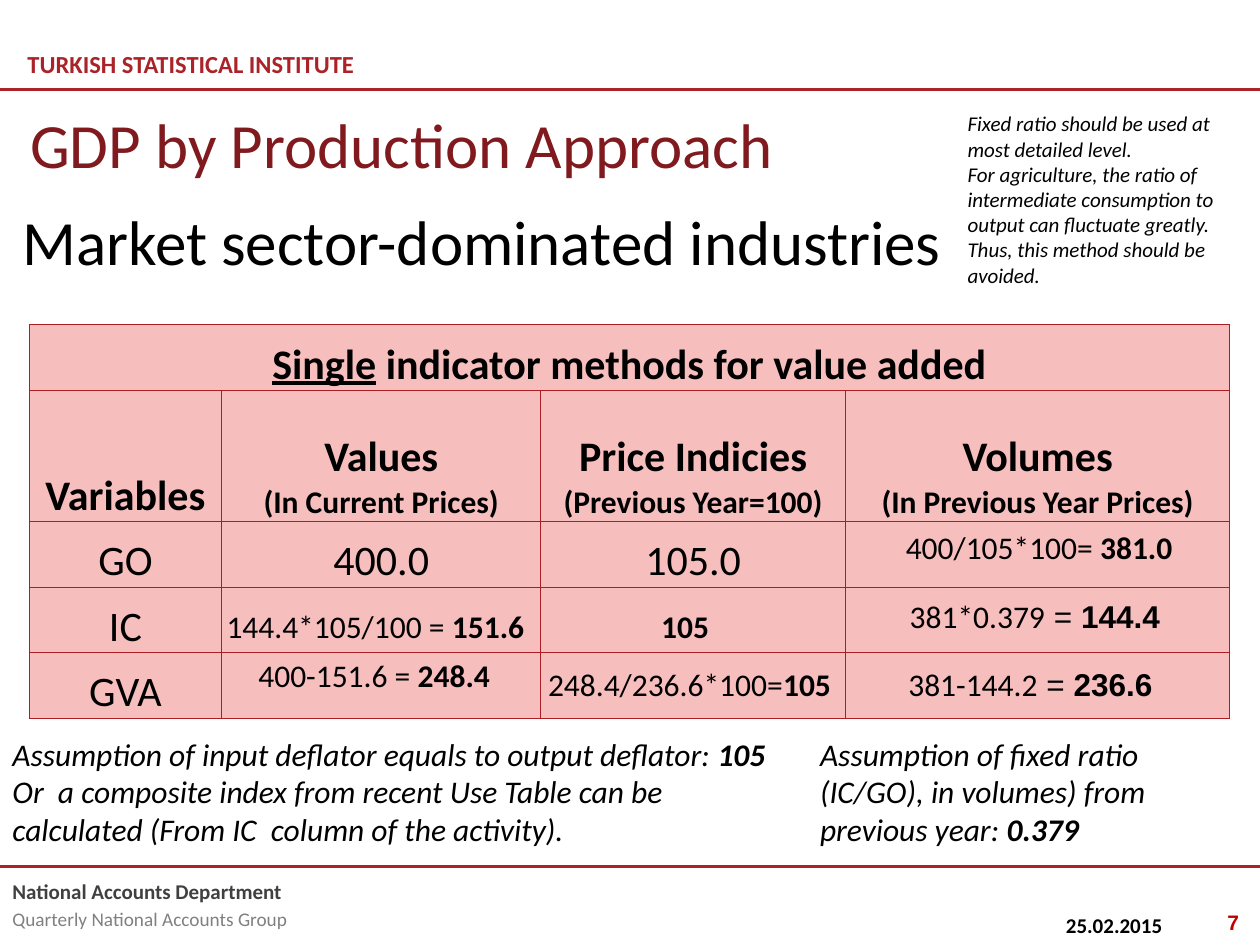
"""Build a slide on single indicator methods for GDP by production approach."""
from lxml import etree
from pptx import Presentation
from pptx.dml.color import RGBColor
from pptx.enum import shapes, text
from pptx.oxml import ns
from pptx.util import Pt

RED = RGBColor(0xAB, 0x23, 0x28)
BORDER = RGBColor(0xAB, 0x1F, 0x24)
TITLE = RGBColor(0x80, 0x1A, 0x1E)
NUMBER = RGBColor(0xC0, 0, 0)
PINK = RGBColor(0xF7, 0xBE, 0xBE)
DARK = RGBColor(0x40, 0x40, 0x40)
GREY = RGBColor(0x80, 0x80, 0x80)
BLACK = RGBColor(0, 0, 0)
LEFT, CENTER, RIGHT = text.PP_ALIGN.LEFT, text.PP_ALIGN.CENTER, text.PP_ALIGN.RIGHT


class Deck:
    """Holds the style and the current slide."""

    font = "Calibri"

    def __init__(self):
        self.prs = Presentation()
        self.prs.slide_width, self.prs.slide_height = Pt(720), Pt(540)
        self.s = self.prs.slides.add_slide(self.prs.slide_layouts[5])

    def para(self, p, runs, size=18, color=BLACK, align=LEFT, bold=False,
             italic=False, font=None, before=0):
        for words, changes in runs:
            r = p.add_run()
            r.text = words
            for name, value in changes.items():
                setattr(r.font, name, value)
        p.alignment = align
        p.space_before = Pt(before)
        f = p.font
        f.name, f.size, f.bold, f.italic = font or self.font, Pt(size), bold, italic
        f.color.rgb = color

    def title(self, words, x, y, w, h):
        sp = self.s.shapes.title
        sp.left, sp.top, sp.width, sp.height = Pt(x), Pt(y), Pt(w), Pt(h)
        sp.text_frame.vertical_anchor = text.MSO_ANCHOR.MIDDLE
        self.para(sp.text_frame.paragraphs[0], [(words, {})], 36, TITLE)

    def text(self, x, y, w, h, *paras, anchor=text.MSO_ANCHOR.TOP, **style):
        tf = self.s.shapes.add_textbox(Pt(x), Pt(y), Pt(w), Pt(h)).text_frame
        tf.word_wrap = True
        tf.vertical_anchor = anchor
        self.fill_frame(tf, paras, style)

    def fill_frame(self, tf, paras, style):
        for i, item in enumerate(paras):
            runs, own = item if isinstance(item, tuple) else (item, {})
            runs = [(runs, {})] if isinstance(runs, str) else runs
            p = tf.add_paragraph() if i else tf.paragraphs[0]
            self.para(p, runs, **{**style, **own})

    def rule(self, y):
        line = self.s.shapes.add_connector(
            shapes.MSO_CONNECTOR.STRAIGHT, 0, Pt(y), Pt(720), Pt(y))
        line.line.color.rgb, line.line.width = RED, Pt(1.5)
        etree.SubElement(line._element.spPr, ns.qn("a:effectLst"))

    def table(self, x, y, widths, heights, rows):
        t = self.s.shapes.add_table(len(heights), len(widths), Pt(x), Pt(y),
                                    Pt(sum(widths)), Pt(sum(heights))).table
        for col, w in zip(t.columns, widths):
            col.width = Pt(w)
        for row, h in zip(t.rows, heights):
            row.height = Pt(h)
        for r, cells in enumerate(rows):
            for cell, paras in zip(t.rows[r].cells, cells):
                self.cell(cell, paras, r < 2)
        t.cell(0, 0).merge(t.cell(0, len(widths) - 1))

    def cell(self, cell, paras, bold):
        cell.fill.solid()
        cell.fill.fore_color.rgb = PINK
        cell.vertical_anchor = text.MSO_ANCHOR.BOTTOM
        cell.margin_left = cell.margin_right = cell.margin_top = Pt(0.7)
        cell.margin_bottom = 0
        self.fill_frame(cell.text_frame, paras, dict(size=24, align=CENTER, bold=bold))
        for i, side in enumerate(("lnL", "lnR", "lnT", "lnB")):
            ln = etree.Element(ns.qn("a:" + side), w=str(Pt(0.75)))
            fill = etree.SubElement(ln, ns.qn("a:solidFill"))
            etree.SubElement(fill, ns.qn("a:srgbClr"), val=str(BORDER))
            cell._tc.get_or_add_tcPr().insert(i, ln)


def main():
    d = Deck()
    bold, arial = {"bold": True}, {"name": "Arial"}
    arial_bold = {**arial, **bold}
    d.text(8.6, 22.5, 255, 28, "TURKISH STATISTICAL INSTITUTE", size=14, color=RED,
           bold=True, anchor=text.MSO_ANCHOR.MIDDLE)
    d.text(0, 498.2, 309, 38, ("National Accounts Department", {"bold": True}),
           ("Quarterly National Accounts Group",
            {"size": 11, "color": GREY, "before": 2}), size=12, color=DARK)
    for y in (51, 495):
        d.rule(y)
    d.text(602, 517.7, 118, 22, "25.02.2015", size=12, bold=True)
    d.text(547, 516.2, 168, 22, "7", size=12, bold=True, color=NUMBER,
           font="Arial", align=RIGHT)
    d.title("GDP by Production Approach", 10, 56.2, 648, 51)
    d.text(5.8, 112.3, 618, 51, "Market sector-dominated industries", size=36)

    small = {"size": 18}
    d.table(16.6, 185.6, [110.2, 182.2, 174.2, 219.6], [37.5, 75, 37.5, 37.5, 37.5], [
        [[[("Single", {"underline": True}), (" indicator methods for value added", {})]],
         [], [], []],
        [["Variables"],
         ["Values", ("(In Current Prices)", small)],
         ["Price Indicies", ("(Previous Year=100)", small)],
         ["Volumes", ("(In Previous Year Prices)", small)]],
        [["GO"], ["400.0"], ["105.0"], []],
        [["IC"], [], [], []],
        [["GVA"], [], [], []],
    ])

    formulas = [
        (483.8, 298, 220, [("400/105*100= ", {}), ("381.0", bold)]),
        (481.3, 337.7, 220, [("381*0.379", {}), (" = ", arial), ("144.4", arial_bold)]),
        (478.8, 376.6, 220, [("381-144.2", {}), (" = ", arial), ("236.6", arial_bold)]),
        (129.6, 371.5, 168.5, [("400-151.6 = ", {}), ("248.4", bold)]),
        (281.5, 376.6, 225, [("248.4/236.6*100=", {}), ("105", bold)]),
        (281.5, 343.4, 220, [("105", bold)]),
        (104.5, 343.4, 220, [("144.4*105/100 = ", {}), ("151.6", bold)]),
    ]
    for x, y, w, runs in formulas:
        d.text(x, y, w, 29, runs, align=CENTER)

    d.text(461.5, 416.2, 248, 76,
           [("Assumption of fixed ratio (IC/GO), in volumes) from previous year: ", {}),
            ("0.379", bold)], italic=True)
    d.text(0, 416.2, 456, 76,
           [("Assumption of input deflator equals to output deflator: ", {}),
            ("105", bold)],
           "Or  a composite index from recent Use Table can be calculated "
           "(From IC  column of the activity).", italic=True)
    d.text(545.8, 59.8, 158, 109,
           "Fixed ratio should be used at most detailed level.",
           "For agriculture, the ratio of intermediate consumption to output "
           "can fluctuate greatly.",
           "Thus, this method should be avoided.", size=12, italic=True)
    d.prs.save("out.pptx")


if __name__ == "__main__":
    main()
